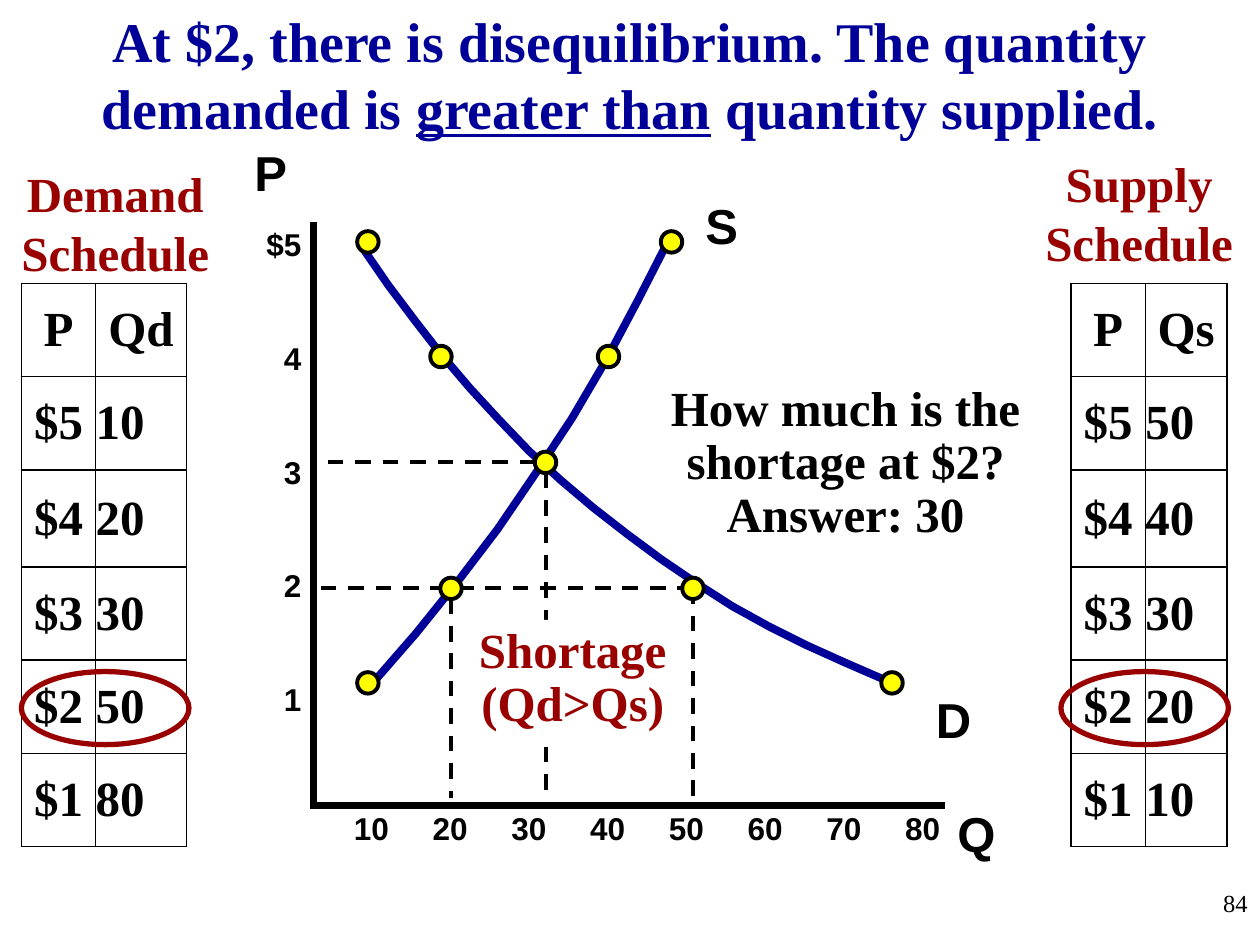
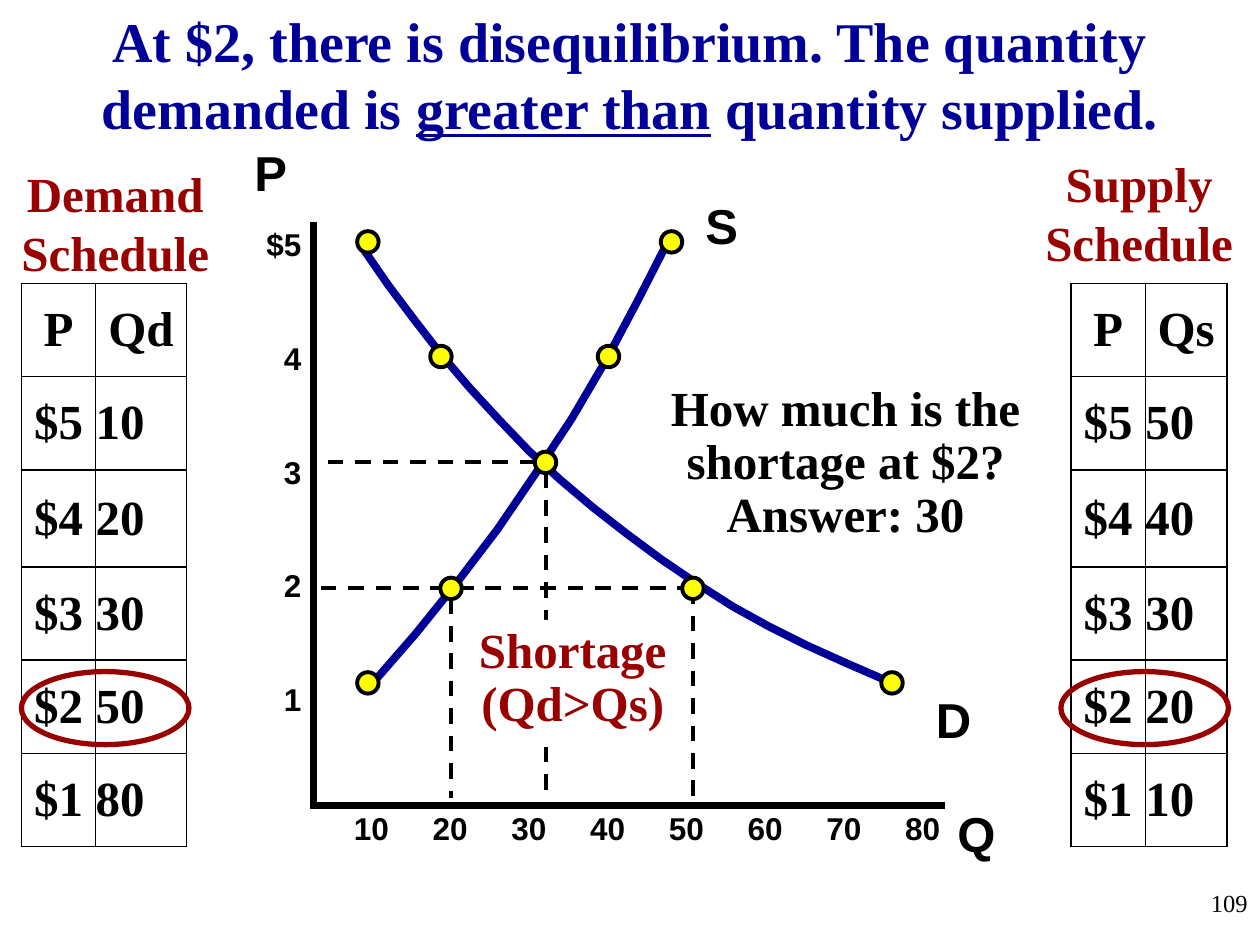
from lxml.etree import SubElement
from pptx import Presentation
from pptx.dml.color import RGBColor
from pptx.enum.dml import MSO_LINE
from pptx.enum.shapes import MSO_CONNECTOR, MSO_SHAPE
from pptx.enum.text import MSO_ANCHOR, MSO_AUTO_SIZE, PP_ALIGN
from pptx.oxml.ns import qn
from pptx.util import Inches, Pt

SLIDE_NUMBERS = ["84", "109"]
TITLE = [
    ("At $2, there is disequilibrium. The quantity demanded is ", False),
    ("greater than", True),
    (" quantity supplied.", False),
]
PRICES = ["$5", "$4", "$3", "$2", "$1"]
PRICE_LABELS = ["$5", "4", "3", "2", "1"]
QUANTITY_LABELS = [str(quantity) for quantity in range(10, 90, 10)]
# Heading and its box, table left, quantity column width, ring left, quantities
SCHEDULES = [
    {"heading": "Demand Schedule", "box": (0, 1.25, 1.83, 1.03), "left": 0.17,
     "symbol": "Qd", "quantity_width": 0.72, "ring_left": 0.17,
     "quantities": [10, 20, 30, 50, 80]},
    {"heading": "Supply Schedule", "box": (8.08, 1.17, 1.92, 1.03), "left": 8.5,
     "symbol": "Qs", "quantity_width": 0.65, "ring_left": 8.42,
     "quantities": [50, 40, 30, 20, 10]},
]
CURVE_NAMES = [("P", 1.92, 1.08), ("Q", 7.5, 6.33), ("D", 7.33, 5.42), ("S", 5.5, 1.5)]

COLORS = {"navy": "000099", "red": "990000", "black": "000000",
          "yellow": "FFFF00", "white": "FFFFFF"}
SERIF, SANS = "Times New Roman", "Arial"

# Graph geometry, in inches
AXIS_X, AXIS_Y = 2.49, 6.39
PRICE_Y = [1.92, 2.83, 3.67, 4.67, 5.42]
DEMAND_X = [2.92, 3.5, 4.33, 5.5, 7.08]
SUPPLY_X = [5.33, 4.83, 4.33, 3.58, 2.92]
MARKER_SIZE = 0.17
QUANTITY_STEP = 5 / 8
DEMAND_CURVE = [
    (2.88, 1.97), (3.08, 2.26), (3.29, 2.54), (3.5, 2.81), (3.73, 3.08), (3.96, 3.33),
    (4.2, 3.58), (4.45, 3.81), (4.71, 4.03), (4.98, 4.24), (5.25, 4.44), (5.53, 4.63),
    (5.81, 4.81), (6.1, 4.97), (6.4, 5.12), (6.71, 5.26), (7.01, 5.39),
]
SUPPLY_CURVE = [
    (2.96, 5.42), (3.3, 5.03), (3.63, 4.62), (3.95, 4.2), (4.25, 3.76),
    (4.54, 3.32), (4.81, 2.86), (5.06, 2.39), (5.3, 1.92),
]
GUIDES = [
    ((3.58, 4.75), (3.58, 6.33)),
    ((5.5, 4.67), (5.5, 6.42)),
    ((5.5, 4.67), (2.5, 4.67)),
    ((4.25, 3.67), (2.5, 3.67)),
    ((4.33, 3.75), (4.33, 6.33)),
]
AXES = [((AXIS_X, 1.76), (AXIS_X, 6.42)), ((2.46, AXIS_Y), (7.5, AXIS_Y))]
ROW_HEIGHTS = [0.74, 0.74, 0.77, 0.74, 0.74, 0.74]
PRICE_COLUMN = 0.59


def color(name):
    return RGBColor.from_string(COLORS[name])


def inches(*lengths):
    return [Inches(length) for length in lengths]


def style_paragraph(paragraph, size, font=SERIF, ink="black", bold=True, align=PP_ALIGN.LEFT):
    paragraph.alignment = align
    paragraph.font.size = Pt(size)
    paragraph.font.name = font
    paragraph.font.bold = bold
    paragraph.font.color.rgb = color(ink)


def fill_text(shape, lines, size, spacing=None, **style):
    frame = shape.text_frame
    frame.word_wrap = True
    frame.vertical_anchor = MSO_ANCHOR.TOP
    frame.text = "\n".join(lines)
    for paragraph in frame.paragraphs:
        style_paragraph(paragraph, size, **style)
        if spacing:
            paragraph.line_spacing = spacing
    return frame


def add_text(slide, box, lines, size, **style):
    return fill_text(slide.shapes.add_textbox(*inches(*box)), lines, size, **style)


def set_line(shape, ink, width):
    shape.line.color.rgb = color(ink)
    shape.line.width = Pt(width)


def add_line(slide, start, end, width, dash=None):
    line = slide.shapes.add_connector(MSO_CONNECTOR.STRAIGHT, *inches(*start, *end))
    set_line(line, "black", width)
    if dash:
        line.line.dash_style = dash
    SubElement(line._element.spPr, qn("a:effectLst"))


def add_shape(slide, kind, box, fill=None, outline=None, width=1):
    shape = slide.shapes.add_shape(kind, *inches(*box))
    shape.shadow.inherit = False
    if fill:
        shape.fill.solid()
        shape.fill.fore_color.rgb = color(fill)
    else:
        shape.fill.background()
    if outline:
        set_line(shape, outline, width)
    else:
        shape.line.fill.background()
    return shape


def add_curve(slide, points):
    start, *rest = [inches(*point) for point in points]
    builder = slide.shapes.build_freeform(*start)
    builder.add_line_segments(rest, close=False)
    curve = builder.convert_to_shape()
    curve.shadow.inherit = False
    curve.fill.background()
    set_line(curve, "navy", 4.5)


def add_title(slide):
    title = slide.shapes.title
    title.left, title.top, title.width, title.height = inches(0, 0, 10, 1.17)
    frame = title.text_frame
    frame.auto_size = MSO_AUTO_SIZE.NONE
    frame.vertical_anchor = MSO_ANCHOR.MIDDLE
    paragraph = frame.paragraphs[0]
    for text, underlined in TITLE:
        run = paragraph.add_run()
        run.text = text
        if underlined:
            run.font.underline = True
    style_paragraph(paragraph, 32, ink="navy", align=PP_ALIGN.CENTER)


def set_borders(cell):
    properties = cell._tc.get_or_add_tcPr()
    for position, side in enumerate(("lnL", "lnR", "lnT", "lnB")):
        border = SubElement(properties, qn(f"a:{side}"), w=str(Pt(1)))
        fill = SubElement(border, qn("a:solidFill"))
        SubElement(fill, qn("a:srgbClr"), val=COLORS["black"])
        properties.insert(position, border)


def add_schedule(slide, schedule):
    add_text(slide, schedule["box"], [schedule["heading"]], 28, ink="red",
             align=PP_ALIGN.CENTER)
    rows = [("P", schedule["symbol"]), *zip(PRICES, map(str, schedule["quantities"]))]
    widths = [PRICE_COLUMN, schedule["quantity_width"]]
    table = slide.shapes.add_table(
        len(rows), 2, *inches(schedule["left"], 2.25, sum(widths), sum(ROW_HEIGHTS))).table
    table.first_row = table.horz_banding = False
    for column, width in zip(table.columns, widths):
        column.width = Inches(width)
    for row_index, (row, height) in enumerate(zip(rows, ROW_HEIGHTS)):
        table.rows[row_index].height = Inches(height)
        for column_index, text in enumerate(row):
            cell = table.cell(row_index, column_index)
            cell.text = text
            cell.margin_left = cell.margin_right = cell.margin_top = cell.margin_bottom = 0
            cell.vertical_anchor = MSO_ANCHOR.MIDDLE
            cell.fill.background()
            set_borders(cell)
            centred = row_index == 0 or column_index == 0
            style_paragraph(cell.text_frame.paragraphs[0], 28,
                            align=PP_ALIGN.CENTER if centred else PP_ALIGN.LEFT)
    add_shape(slide, MSO_SHAPE.OVAL, (schedule["ring_left"], 5.33, 1.33, 0.58),
              outline="red", width=3)


def add_axis_labels(slide):
    prices = add_text(slide, (2.01, 1.74, 0.48, 4.01), PRICE_LABELS, 18, font=SANS,
                      align=PP_ALIGN.RIGHT)
    for paragraph in prices.paragraphs[1:]:
        paragraph.space_before = Pt(43.3)

    box = slide.shapes.add_textbox(*inches(2.71, 6.37, 4.95, 0.4))
    paragraph = box.text_frame.paragraphs[0]
    tabs = SubElement(paragraph._p.get_or_add_pPr(), qn("a:tabLst"))
    for index in range(1, len(QUANTITY_LABELS)):
        SubElement(tabs, qn("a:tab"), pos=str(Inches(index * QUANTITY_STEP)), algn="l")
    paragraph.add_run().text = "\t".join(QUANTITY_LABELS)
    box.text_frame.word_wrap = True
    style_paragraph(paragraph, 18, font=SANS)


def add_graph(slide):
    for start, end in GUIDES:
        add_line(slide, start, end, 2.25, MSO_LINE.DASH)
    for start, end in AXES:
        add_line(slide, start, end, 4)
    add_axis_labels(slide)
    add_curve(slide, DEMAND_CURVE)
    add_curve(slide, SUPPLY_CURVE)
    markers = dict.fromkeys([*zip(DEMAND_X, PRICE_Y), *zip(SUPPLY_X, PRICE_Y)])
    for x, y in markers:
        add_shape(slide, MSO_SHAPE.OVAL,
                  (x - MARKER_SIZE / 2, y - MARKER_SIZE / 2, MARKER_SIZE, MARKER_SIZE),
                  "yellow", "black", 2.25)
    for name, left, top in CURVE_NAMES:
        add_text(slide, (left, top, 0.5, 0.57), [name], 28, font=SANS)


def add_shortage_slide(presentation, number):
    slide = presentation.slides.add_slide(presentation.slide_layouts.get_by_name("Title Only"))
    add_title(slide)
    add_graph(slide)
    for schedule in SCHEDULES:
        add_schedule(slide, schedule)
    shortage = add_shape(slide, MSO_SHAPE.RECTANGLE, (3.67, 4.92, 1.75, 0.94), "white")
    fill_text(shortage, ["Shortage", "(Qd>Qs)"], 28, spacing=0.9, ink="red",
              align=PP_ALIGN.CENTER)
    add_text(slide, (5.17, 3, 3.08, 1.36), ["How much is the shortage at $2?", "Answer: 30"],
             28, spacing=0.9, align=PP_ALIGN.CENTER)
    add_text(slide, (7.92, 7, 2.08, 0.5), [number], 14, bold=False, align=PP_ALIGN.RIGHT)


def main():
    presentation = Presentation()
    presentation.slide_width, presentation.slide_height = inches(10, 7.5)
    for number in SLIDE_NUMBERS:
        add_shortage_slide(presentation, number)
    presentation.save("out.pptx")


if __name__ == "__main__":
    main()
